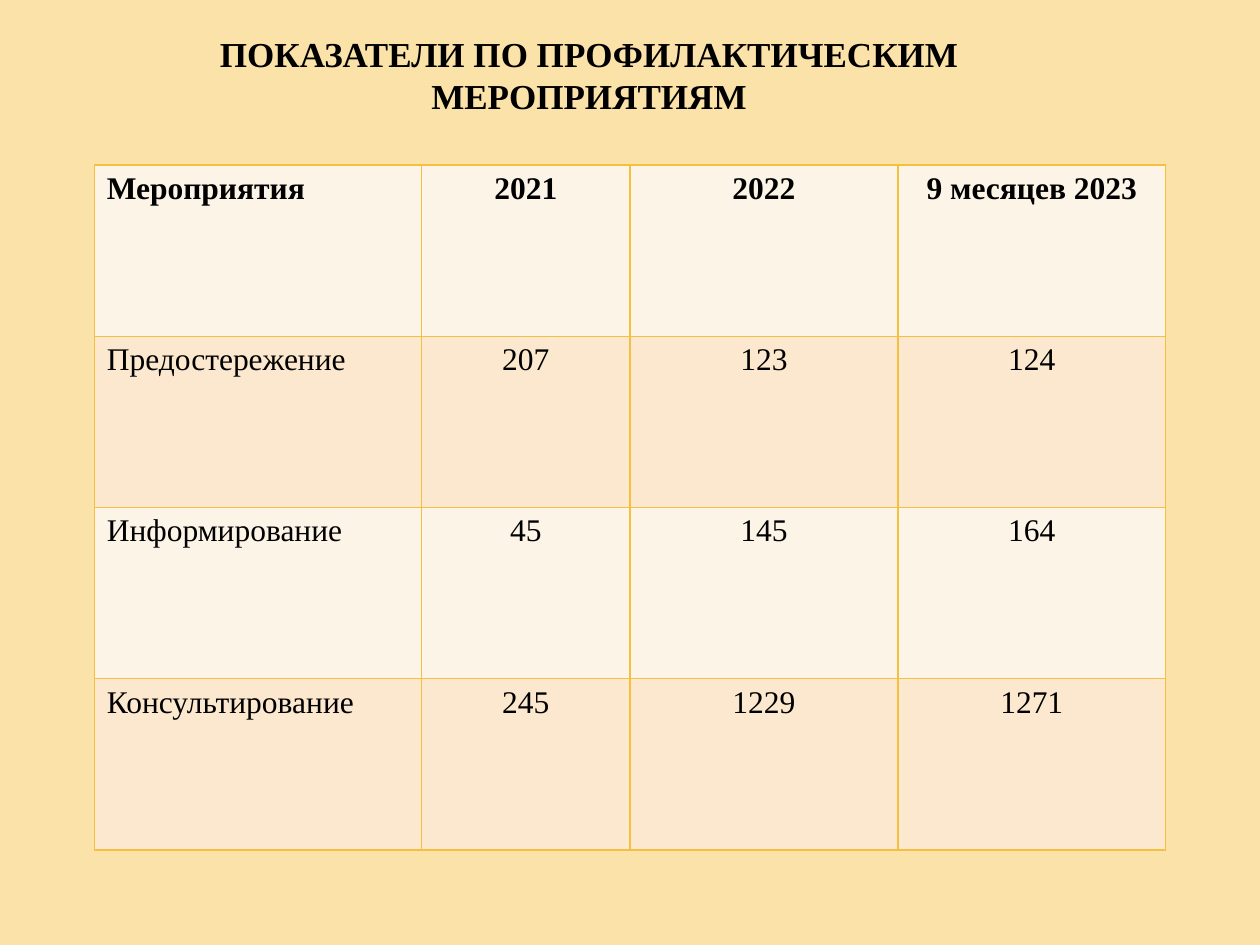
from lxml import etree
from pptx import Presentation
from pptx.dml.color import RGBColor
from pptx.enum.text import MSO_ANCHOR, PP_ALIGN
from pptx.oxml.ns import qn
from pptx.util import Cm, Pt

LEFT, CENTER = PP_ALIGN.LEFT, PP_ALIGN.CENTER
TOP = MSO_ANCHOR.TOP


def rgb(value):
    return RGBColor.from_string(value)


def write(tf, text, size=18, bold=False, align=LEFT, color="000000",
          font="Times New Roman"):
    p = tf.paragraphs[0]
    p.alignment = align
    r = p.add_run()
    r.text = text
    r.font.name = font
    r.font.size = Pt(size)
    r.font.bold = bold
    r.font.color.rgb = rgb(color)


class SlideBuilder:
    BACKGROUND = "FBE2A9"
    BORDER = "F5C040"
    BANDS = ("FDF4E8", "FBE8CF")

    def __init__(self, prs):
        self.s = prs.slides.add_slide(prs.slide_layouts[6])
        fill = self.s.background.fill
        fill.solid()
        fill.fore_color.rgb = rgb(self.BACKGROUND)

    def title(self, text, left, top, width, height):
        sp = self.s.shapes.add_textbox(Cm(left), Cm(top), Cm(width), Cm(height))
        tf = sp.text_frame
        tf.word_wrap = True
        tf.vertical_anchor = TOP
        write(tf, text, size=20, bold=True, align=CENTER)

    def border(self, cell):
        tc_pr = cell._tc.get_or_add_tcPr()
        for i, side in enumerate(("a:lnL", "a:lnR", "a:lnT", "a:lnB")):
            ln = etree.Element(qn(side), w=str(Pt(1)))
            fill = etree.SubElement(ln, qn("a:solidFill"))
            etree.SubElement(fill, qn("a:srgbClr"), val=self.BORDER)
            tc_pr.insert(i, ln)  # borders come before the cell fill

    def table(self, rows, left, top, widths, row_height):
        frame = self.s.shapes.add_table(
            len(rows), len(widths), Cm(left), Cm(top),
            Cm(sum(widths)), Cm(row_height * len(rows)))
        table = frame.table
        for column, width in zip(table.columns, widths):
            column.width = Cm(width)
        for i, values in enumerate(rows):
            table.rows[i].height = Cm(row_height)
            for j, value in enumerate(values):
                cell = table.cell(i, j)
                cell.fill.solid()
                cell.fill.fore_color.rgb = rgb(self.BANDS[i % 2])
                self.border(cell)
                write(cell.text_frame, value, bold=i == 0,
                      align=CENTER if j else LEFT)


def main():
    prs = Presentation()
    prs.slide_width, prs.slide_height = Cm(25.4), Cm(19.05)
    slide = SlideBuilder(prs)

    # Title
    slide.title("ПОКАЗАТЕЛИ ПО ПРОФИЛАКТИЧЕСКИМ МЕРОПРИЯТИЯМ",
                3.3, 0.53, 17.15, 3.2)

    # Measures by year
    rows = [
        ("Мероприятия", "2021", "2022", "9 месяцев 2023"),
        ("Предостережение", "207", "123", "124"),
        ("Информирование", "45", "145", "164"),
        ("Консультирование", "245", "1229", "1271"),
    ]
    slide.table(rows, 1.9, 3.33, (6.6, 4.2, 5.4, 5.4), 3.45)

    prs.save("out.pptx")


if __name__ == "__main__":
    main()
